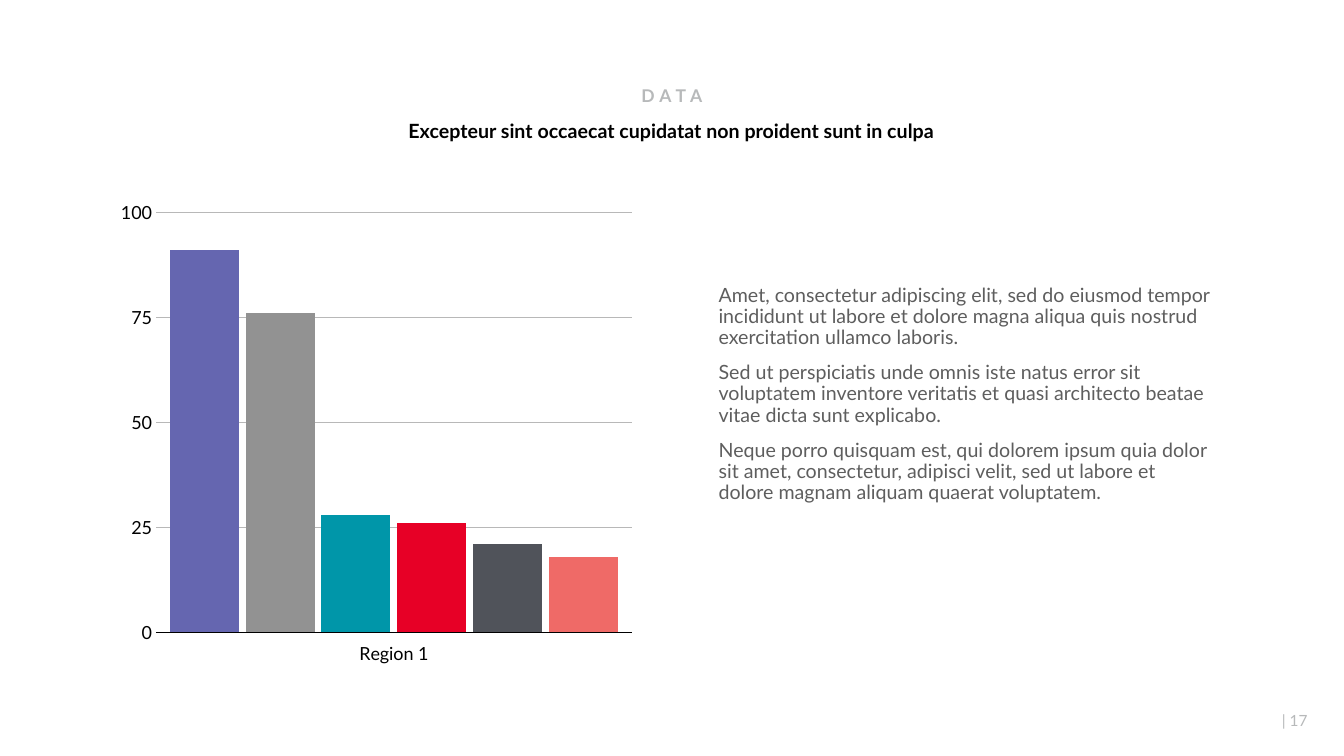
from dataclasses import dataclass, field

from lxml import etree
from pptx import Presentation
from pptx.chart.data import CategoryChartData
from pptx.dml.color import RGBColor
from pptx.enum.chart import XL_CHART_TYPE, XL_TICK_LABEL_POSITION, XL_TICK_MARK
from pptx.enum.text import MSO_ANCHOR, PP_ALIGN
from pptx.oxml.ns import qn
from pptx.util import Inches, Pt

LEFT, CENTER, RIGHT = PP_ALIGN.LEFT, PP_ALIGN.CENTER, PP_ALIGN.RIGHT
TOP, MIDDLE = MSO_ANCHOR.TOP, MSO_ANCHOR.MIDDLE
COLUMN_CLUSTERED = XL_CHART_TYPE.COLUMN_CLUSTERED
LABELS_LOW = XL_TICK_LABEL_POSITION.LOW
NO_TICK = XL_TICK_MARK.NONE

SLIDE_WIDTH, SLIDE_HEIGHT = Inches(13.33), Inches(7.5)
FONT = "Lato"
COLORS = {
    "black": "000000", "muted": "B7B9BA", "body": "5E5E5E", "grid": "B8B8B8",
    "violet": "6566B0", "gray": "929292", "teal": "0096A9",
    "red": "E70026", "slate": "50535A", "coral": "EF6A67",
}


@dataclass(frozen=True)
class Area:
    """Left, top, width and height in percent of the slide."""
    left: float
    top: float
    width: float
    height: float

    def emu(self) -> tuple[int, ...]:
        return (share(self.left, SLIDE_WIDTH), share(self.top, SLIDE_HEIGHT),
                share(self.width, SLIDE_WIDTH), share(self.height, SLIDE_HEIGHT))


@dataclass(frozen=True)
class Passage:
    area: Area
    paragraphs: tuple[str, ...]
    size: float
    color: str
    bold: bool = False
    tracking: int = 0
    anchor: MSO_ANCHOR = TOP
    wrap: bool = True
    layout: dict = field(default_factory=dict)


@dataclass(frozen=True)
class Column:
    value: int
    color: str


PASSAGES = (
    Passage(Area(94.65, 93.47, 1.73, 3.87), ("|",), 11, "muted", wrap=False),
    Passage(Area(11.18, 10.93, 77.63, 3.87), ("DATA",), 12.5, "muted", bold=True,
            tracking=380, anchor=MIDDLE,
            layout={"alignment": CENTER, "line_spacing": 0.9}),
    Passage(Area(21.3, 15.47, 57.3, 5.6),
            ("Excepteur sint occaecat cupidatat non proident sunt in culpa",),
            14, "black", bold=True,
            layout={"alignment": CENTER, "line_spacing": 0.9}),
    Passage(Area(52.73, 37.07, 38.33, 53.07), (
        "Amet, consectetur adipiscing elit, sed do eiusmod tempor incididunt ut "
        "labore et dolore magna aliqua quis nostrud exercitation ullamco laboris.",
        "Sed ut perspiciatis unde omnis iste natus error sit voluptatem inventore "
        "veritatis et quasi architecto beatae vitae dicta sunt explicabo.",
        "Neque porro quisquam est, qui dolorem ipsum quia dolor sit amet, "
        "consectetur, adipisci velit, sed ut labore et dolore magnam aliquam "
        "quaerat voluptatem.",
    ), 14, "body", layout={"alignment": LEFT, "line_spacing": 0.9}),
    Passage(Area(92.7, 92.67, 5.33, 5.33), ("17",), 11, "muted", anchor=MIDDLE,
            layout={"alignment": RIGHT}),
)
PARAGRAPH_GAP = Pt(10)

CHART_AREA = Area(9, 26.67, 38.25, 63.47)
PLOT_PERCENT = {"x": 6.5, "y": 2.2, "w": 92.9, "h": 87.6}
COLUMNS = (
    Column(91, "violet"), Column(76, "gray"), Column(28, "teal"),
    Column(26, "red"), Column(21, "slate"), Column(18, "coral"),
)


def share(percent: float, whole: int) -> int:
    return round(whole * percent / 100)


def rgb(name: str) -> RGBColor:
    return RGBColor.from_string(COLORS[name])


def apply(target, values: dict) -> None:
    for attribute, value in values.items():
        setattr(target, attribute, value)


def style_font(font, size: float, color: str, bold: bool = False) -> None:
    apply(font, {"name": FONT, "size": Pt(size), "bold": bold})
    font.color.rgb = rgb(color)


def style_line(line, color: str) -> None:
    line.color.rgb = rgb(color)
    line.width = Pt(1)


def add_passage(slide, passage: Passage) -> None:
    frame = slide.shapes.add_textbox(*passage.area.emu()).text_frame
    apply(frame, {"word_wrap": passage.wrap, "vertical_anchor": passage.anchor})
    for index, text in enumerate(passage.paragraphs):
        paragraph = frame.add_paragraph() if index else frame.paragraphs[0]
        apply(paragraph, passage.layout)
        if index:
            paragraph.space_before = PARAGRAPH_GAP
        run = paragraph.add_run()
        run.text = text
        style_font(run.font, passage.size, passage.color, passage.bold)
        if passage.tracking:
            run.font._element.set("spc", str(passage.tracking))


def place_plot(chart) -> None:
    plot_area = chart._chartSpace.chart.plotArea
    for old in plot_area.findall(qn("c:layout")):
        plot_area.remove(old)
    layout = etree.Element(qn("c:layout"))
    manual = etree.SubElement(layout, qn("c:manualLayout"))
    settings = {"layoutTarget": "inner", "xMode": "edge", "yMode": "edge"}
    settings |= {key: str(percent / 100) for key, percent in PLOT_PERCENT.items()}
    for tag, value in settings.items():
        etree.SubElement(manual, qn(f"c:{tag}")).set("val", value)
    plot_area.insert(0, layout)


def add_region_chart(slide, area: Area, columns: tuple[Column, ...]) -> None:
    data = CategoryChartData()
    data.categories = ["Region 1"]
    for column in columns:
        data.add_series("", [column.value])
    chart = slide.shapes.add_chart(COLUMN_CLUSTERED, *area.emu(), data).chart
    apply(chart, {"has_legend": False, "has_title": False})
    style_font(chart.font, 10, "black")
    place_plot(chart)

    # Columns
    plot = chart.plots[0]
    apply(plot, {"gap_width": 40, "overlap": -10, "vary_by_categories": False})
    for series, column in zip(plot.series, columns):
        series.format.fill.solid()
        series.format.fill.fore_color.rgb = rgb(column.color)

    # Axes
    regions, scale = chart.category_axis, chart.value_axis
    for axis in (regions, scale):
        apply(axis, {"major_tick_mark": NO_TICK, "minor_tick_mark": NO_TICK})
        style_font(axis.tick_labels.font, 12.9, "black")
    regions.tick_label_position = LABELS_LOW
    style_line(regions.format.line, "black")
    apply(scale, {"minimum_scale": 0, "maximum_scale": 100, "major_unit": 25,
                  "has_major_gridlines": True})
    scale.format.line.fill.background()
    style_line(scale.major_gridlines.format.line, "grid")


def main() -> None:
    deck = Presentation()
    apply(deck, {"slide_width": SLIDE_WIDTH, "slide_height": SLIDE_HEIGHT})
    slide = deck.slides.add_slide(deck.slide_layouts[6])
    # Headings, commentary and page number
    for passage in PASSAGES:
        add_passage(slide, passage)
    # Values of the region
    add_region_chart(slide, CHART_AREA, COLUMNS)
    deck.save("out.pptx")


if __name__ == "__main__":
    main()
